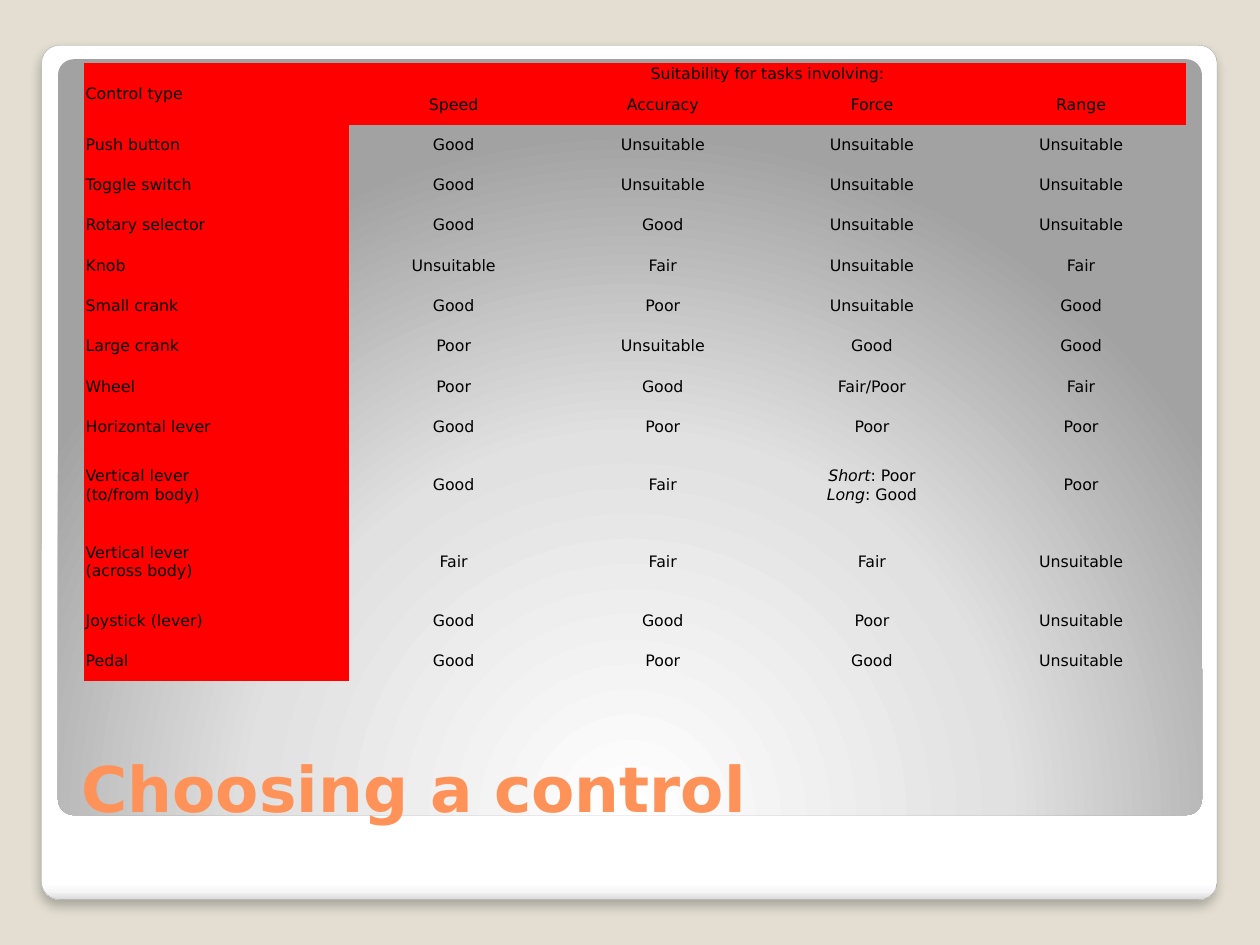
"""Build the "Choosing a control" slide: a suitability table on a framed panel."""
from lxml import etree
from pptx import Presentation
from pptx import util as u
from pptx.dml.color import RGBColor
from pptx.enum import shapes, text
from pptx.oxml import parse_xml
from pptx.oxml.ns import nsdecls, qn

Inches = u.Inches
FONT = "DejaVu Sans"
COLOURS = {
    "backdrop": "E3DED1",
    "outline": "A4A4A4",
    "title": "FF9258",
    "heading": "FF0000",
    "ink": "000000",
}
NO_GRID_STYLE = "{2D5ABB26-0587-4C30-8999-92F81FD0307C}"
FRAME_STOPS = [(0, "FFFFFF"), (98, "FFFFFF"), (99, "F7F7F7"), (100, "DADADA")]
PANEL_STOPS = [(0, "FFFFFF"), (55, "E1E1E1"), (100, "A2A2A2")]
DOWNWARD = '<a:lin ang="5400000" scaled="0"/>'
FROM_BELOW = (
    '<a:path path="circle">'
    '<a:fillToRect l="50000" t="175000" r="50000" b="-75000"/></a:path>'
)
ROWS = [
    ["Control type", "Suitability for tasks involving:", "", "", ""],
    ["", "Speed", "Accuracy", "Force", "Range"],
    ["Push button", "Good", "Unsuitable", "Unsuitable", "Unsuitable"],
    ["Toggle switch", "Good", "Unsuitable", "Unsuitable", "Unsuitable"],
    ["Rotary selector", "Good", "Good", "Unsuitable", "Unsuitable"],
    ["Knob", "Unsuitable", "Fair", "Unsuitable", "Fair"],
    ["Small crank", "Good", "Poor", "Unsuitable", "Good"],
    ["Large crank", "Poor", "Unsuitable", "Good", "Good"],
    ["Wheel", "Poor", "Good", "Fair/Poor", "Fair"],
    ["Horizontal lever", "Good", "Poor", "Poor", "Poor"],
    ["Vertical lever\n(to/from body)", "Good", "Fair", "Short: Poor\nLong: Good", "Poor"],
    ["Vertical lever\n(across body)", "Fair", "Fair", "Fair", "Unsuitable"],
    ["Joystick (lever)", "Good", "Good", "Poor", "Unsuitable"],
    ["Pedal", "Good", "Poor", "Good", "Unsuitable"],
]


def add_rounded_panel(page, left, top, width, height, stops, direction):
    panel = page.shapes.add_shape(
        shapes.MSO_SHAPE.ROUNDED_RECTANGLE,
        Inches(left), Inches(top), Inches(width), Inches(height),
    )
    panel.adjustments[0] = 0.021
    panel.shadow.inherit = False
    panel.line.fill.background()
    marks = "".join(
        f'<a:gs pos="{place * 1000}"><a:srgbClr val="{colour}"/></a:gs>'
        for place, colour in stops
    )
    gradient = parse_xml(
        f'<a:gradFill {nsdecls("a")} rotWithShape="1">'
        f"<a:gsLst>{marks}</a:gsLst>{direction}</a:gradFill>"
    )
    panel._element.spPr.find(qn("a:prstGeom")).addnext(gradient)
    return panel


def style_font(font, size, colour):
    font.name = FONT
    font.size = u.Pt(size)
    font.color.rgb = RGBColor.from_string(COLOURS[colour])


deck = Presentation()
deck.slide_width, deck.slide_height = Inches(10), Inches(7.5)
page = deck.slides.add_slide(deck.slide_layouts[6])
page.background.fill.solid()
page.background.fill.fore_color.rgb = RGBColor.from_string(COLOURS["backdrop"])

frame = add_rounded_panel(page, 0.33, 0.36, 9.33, 6.78, FRAME_STOPS, DOWNWARD)
frame.line.color.rgb = RGBColor.from_string(COLOURS["outline"])
frame.line.width = u.Pt(0.16)
effects = frame._element.spPr.find(qn("a:effectLst"))
shadow = etree.SubElement(
    effects, qn("a:outerShdw"),
    blurRad=str(u.Pt(6)), dist=str(u.Pt(4)), dir="5400000", rotWithShape="0",
)
shade = etree.SubElement(shadow, qn("a:srgbClr"), val=COLOURS["ink"])
etree.SubElement(shade, qn("a:alpha"), val="25000")

add_rounded_panel(page, 0.46, 0.47, 9.08, 6, PANEL_STOPS, FROM_BELOW)

title = page.shapes.add_textbox(Inches(0.55), Inches(5.45), Inches(8.95), Inches(1.15))
title.text_frame.word_wrap = True
title.text_frame.vertical_anchor = text.MSO_ANCHOR.BOTTOM
para = title.text_frame.paragraphs[0]
para.text = "Choosing a control"
style_font(para.font, 36, "title")
para.font.bold = True

table_shape = page.shapes.add_table(
    len(ROWS), 5, Inches(0.67), Inches(0.5), Inches(8.75), Inches(4.92)
)
table = table_shape.table
table.first_row = table.horz_banding = False
table._tbl.tblPr.find(qn("a:tableStyleId")).text = NO_GRID_STYLE
for index, column in enumerate(table.columns):
    column.width = Inches(2.1 if index == 0 else 1.66)

for row_index, row in enumerate(ROWS):
    two_lines = any("\n" in wording for wording in row)
    height = 0.17 if row_index == 0 else 0.61 if two_lines else 0.32
    table.rows[row_index].height = Inches(height)
    for column_index, wording in enumerate(row):
        cell = table.cell(row_index, column_index)
        cell.vertical_anchor = text.MSO_ANCHOR.MIDDLE
        cell.margin_left = cell.margin_right = Inches(0.01)
        cell.margin_top = cell.margin_bottom = Inches(0.01)
        if row_index < 2 or column_index == 0:
            cell.fill.solid()
            cell.fill.fore_color.rgb = RGBColor.from_string(COLOURS["heading"])
        else:
            cell.fill.background()
        para = cell.text_frame.paragraphs[0]
        if column_index:
            para.alignment = text.PP_ALIGN.CENTER
        style_font(para.font, 9, "ink")
        if ": " not in wording:
            para.text = wording
            continue
        for line_index, line in enumerate(wording.split("\n")):
            if line_index:
                para.add_line_break()
            lever, rating = line.split(": ")
            span = para.add_run()
            span.text = lever
            span.font.italic = True
            para.add_run().text = f": {rating}"

table.cell(0, 0).merge(table.cell(1, 0))
table.cell(0, 1).merge(table.cell(0, 4))

deck.save("out.pptx")
